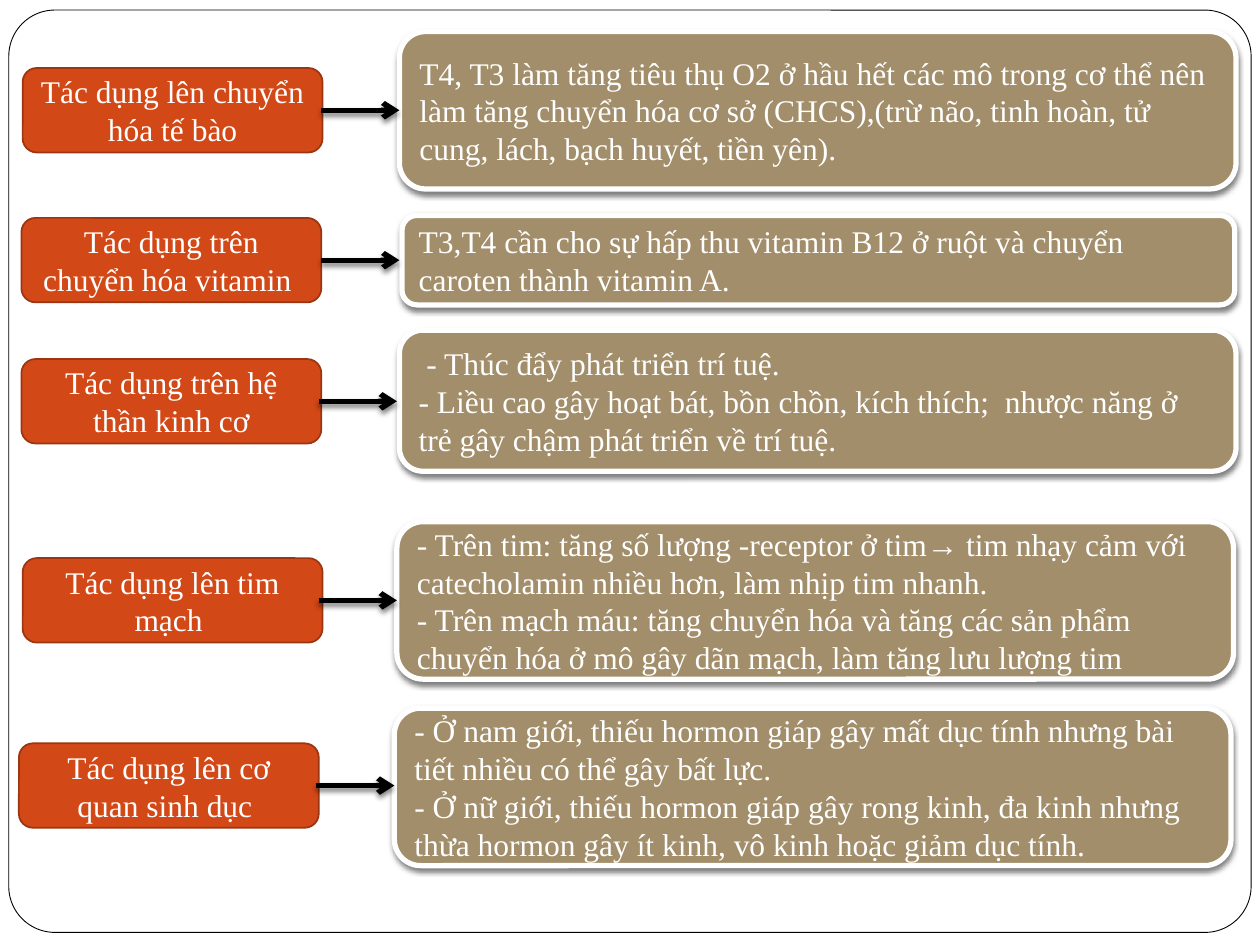
"""Build a slide that pairs five thyroid hormone actions with their details."""
from pptx import Presentation
from pptx.dml.color import RGBColor as Rgb
from pptx.enum.shapes import MSO_CONNECTOR as Link, MSO_SHAPE as Kind
from pptx.enum.text import MSO_ANCHOR as Anchor, PP_ALIGN as Align
from pptx.oxml import parse_xml
from pptx.oxml.ns import nsdecls, qn
from pptx.util import Inches, Pt

HUES = {"white": "FFFFFF", "black": "000000", "red": "D34817", "rust": "9C3511", "tan": "A28E6A"}
FONT = "Times New Roman"

deck = Presentation()
deck.slide_width, deck.slide_height = Inches(10), Inches(7.5)
col, row = deck.slide_width / 100, deck.slide_height / 75
slide = deck.slides.add_slide(deck.slide_layouts[6])
items = slide.shapes


def add_box(left, top, wide, high, fill, edge, size, lines=(), align=Align.LEFT):
    box = items.add_shape(Kind.ROUNDED_RECTANGLE, int(left * col), int(top * row),
                          int(wide * col), int(high * row))
    box.shadow.inherit = False
    box.fill.solid()
    box.fill.fore_color.rgb = Rgb.from_string(HUES[fill])
    box.line.color.rgb = Rgb.from_string(HUES[edge])
    box.line.width = Pt(size)
    frame = box.text_frame
    frame.word_wrap = True
    frame.vertical_anchor = Anchor.MIDDLE
    for spot, line in enumerate(lines):
        para = frame.add_paragraph() if spot else frame.paragraphs[0]
        para.alignment = align
        run = para.add_run()
        run.text = line
        run.font.name, run.font.size = FONT, Pt(18)
        run.font.color.rgb = Rgb.from_string(HUES["white"])
    return box


def add_shade(item):
    props = item.element.spPr
    for old in props.findall(qn("a:effectLst")):
        props.remove(old)
    props.append(parse_xml(
        f'<a:effectLst {nsdecls("a")}><a:outerShdw blurRad="{Pt(3)}" dist="{Pt(2)}" '
        f'dir="5400000" rotWithShape="0"><a:srgbClr val="{HUES["black"]}">'
        '<a:alpha val="50000"/></a:srgbClr></a:outerShdw></a:effectLst>'))


rows = [
    ("Tác dụng lên chuyển hóa tế bào", 1.8, 5.4, (31.7, 2.5, 66.4, 12.5), 31.7,
     ["T4, T3 làm tăng tiêu thụ O2 ở hầu hết các mô trong cơ thể nên làm tăng chuyển hóa "
      "cơ sở (CHCS),(trừ não, tinh hoàn, tử cung, lách, bạch huyết, tiền yên)."]),
    ("Tác dụng trên chuyển hóa vitamin ", 1.7, 17.3, (31.9, 17.1, 66.1, 7.1), 31.7,
     ["T3,T4 cần cho sự hấp thu vitamin B12 ở ruột và chuyển caroten thành vitamin A."]),
    ("Tác dụng trên hệ thần kinh cơ", 1.7, 28.5, (31.7, 26.2, 66.4, 11.2), 31.5,
     [" - Thúc đẩy phát triển trí tuệ.",
      "- Liều cao gây hoạt bát, bồn chồn, kích thích;  nhược năng ở trẻ gây chậm phát triển "
      "về trí tuệ."]),
    ("Tác dụng lên tim mạch ", 1.8, 44.3, (31.5, 41.4, 66.4, 12.5), 31.5,
     ["- Trên tim: tăng số lượng -receptor ở tim→ tim nhạy cảm với catecholamin nhiều hơn, "
      "làm nhịp tim nhanh.",
      "- Trên mạch máu: tăng chuyển hóa và tăng các sản phẩm chuyển hóa ở mô gây dãn mạch, "
      "làm tăng lưu lượng tim"]),
    ("Tác dụng lên cơ quan sinh dục ", 1.5, 59, (31.3, 56.2, 66.4, 12.5), 31.3,
     ["- Ở nam giới, thiếu hormon giáp gây mất dục tính nhưng bài tiết nhiều có thể gây bất lực.",
      "- Ở nữ giới, thiếu hormon giáp gây rong kinh, đa kinh nhưng thừa hormon gây ít kinh, "
      "vô kinh hoặc giảm dục tính."]),
]
wide, high, reach = 23.8, 6.7, 6.2

border = add_box(0.7, 0.8, 98.6, 73.2, "white", "black", 0.5)
border.adjustments[0] = 0.05

for title, left, top, card, tip, lines in rows:
    add_box(left, top, wide, high, "red", "rust", 1, [title], Align.CENTER)
    add_shade(add_box(*card, "tan", "white", 3, lines))
    mid = int((top + high / 2) * row)
    arrow = items.add_connector(Link.STRAIGHT, int((tip - reach) * col), mid, int(tip * col), mid)
    arrow.line.color.rgb = Rgb.from_string(HUES["black"])
    arrow.line.width = Pt(3)
    arrow.element.spPr.find(qn("a:ln")).append(
        parse_xml(f'<a:tailEnd {nsdecls("a")} type="arrow"/>'))
    add_shade(arrow)

deck.save("out.pptx")
